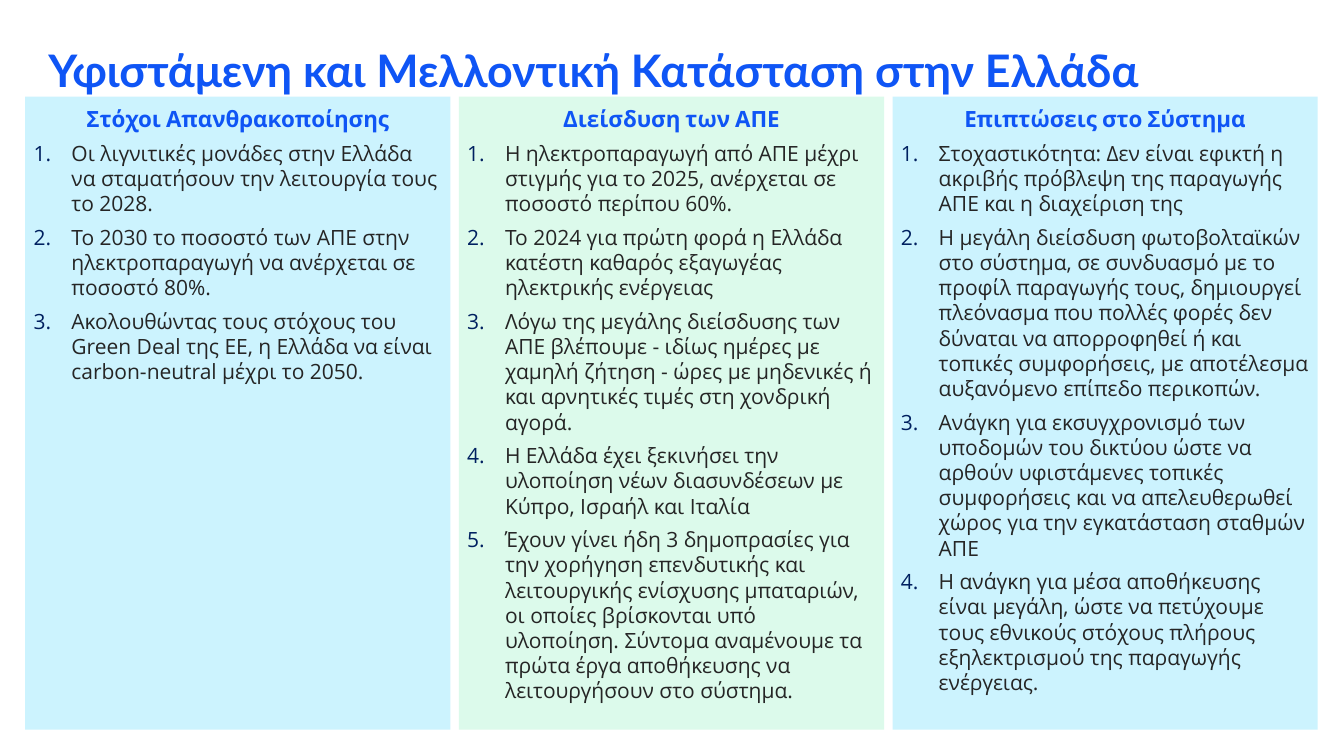
from dataclasses import dataclass
from pptx import Presentation
from pptx.dml.color import RGBColor as Rgb
from pptx.enum.text import MSO_ANCHOR as Anchor, MSO_AUTO_SIZE as Fit, PP_ALIGN as Align
from pptx.oxml.ns import qn
from pptx.util import Pt
from lxml.etree import SubElement as Sub


@dataclass(frozen=True)
class Theme:
    """Colours, fonts and type sizes."""
    blue: str = "0F55F5"
    navy: str = "002060"
    ink: str = "252525"
    sky: str = "CCF3FE"
    mint: str = "DCFAEB"
    title: tuple = ("Lato", 32)
    head: tuple = ("Cabin", 16)
    body: tuple = ("Open Sans", 15)
    gap: int = 6


class Deck:
    """Slide builder with one theme and lengths in px."""

    def __init__(self, theme, wide, high):
        self.theme = theme
        self.prs = Presentation()
        self.prs.slide_width = self.px(wide)
        self.prs.slide_height = self.px(high)
        self.slide = self.prs.slides.add_slide(self.prs.slide_layouts[4])

    def px(self, n):
        return n * 9525

    def place(self, idx, box, inset, anchor, fit):
        hold = self.slide.placeholders[idx]
        hold.left, hold.top, hold.width, hold.height = map(self.px, box)
        frame = hold.text_frame
        frame.margin_left = frame.margin_right = self.px(inset)
        frame.margin_top = frame.margin_bottom = self.px(inset)
        frame.word_wrap = True
        frame.vertical_anchor = anchor
        frame.auto_size = fit
        return hold

    def add_text(self, para, text, face, color, bold):
        run = para.add_run()
        run.text = text
        run.font.name, size = face
        run.font.size = Pt(size)
        run.font.bold = bold
        run.font.color.rgb = Rgb.from_string(color)

    def mark(self, para, indent):
        props = para._p.get_or_add_pPr()
        props.set("marL", str(self.px(indent)))
        props.set("indent", str(-self.px(indent)))
        if not indent:
            Sub(props, qn("a:buNone"))
            return
        tint = Sub(props, qn("a:buClr"))
        Sub(tint, qn("a:srgbClr"), val=self.theme.navy)
        Sub(props, qn("a:buFont"), typeface=self.theme.body[0])
        Sub(props, qn("a:buAutoNum"), type="arabicPeriod")

    def title(self, text, box):
        para = self.place(0, box, 0, Anchor.MIDDLE, Fit.SHAPE_TO_FIT_TEXT).text_frame.paragraphs[0]
        para.alignment = Align.LEFT
        self.add_text(para, text, self.theme.title, self.theme.blue, True)

    def panel(self, idx, box, fill, head, items):
        look = self.theme
        hold = self.place(idx, box, 8, Anchor.TOP, Fit.NONE)
        hold.fill.solid()
        hold.fill.fore_color.rgb = Rgb.from_string(fill)
        para = hold.text_frame.paragraphs[0]
        self.mark(para, 0)
        para.alignment = Align.CENTER
        para.space_before = Pt(0)
        self.add_text(para, head, look.head, look.blue, True)
        for item in items:
            para = hold.text_frame.add_paragraph()
            self.mark(para, 36)
            para.alignment = Align.LEFT
            para.space_before = Pt(look.gap)
            self.add_text(para, item, look.body, look.ink, False)

    def save(self):
        for hold in list(self.slide.placeholders):
            if not hold.text_frame.text:
                hold._element.getparent().remove(hold._element)
        self.prs.save("out.pptx")


def main():
    look = Theme()
    deck = Deck(look, 1280, 720)
    deck.title("Υφιστάμενη και Μελλοντική Κατάσταση στην Ελλάδα", (46, 40, 1187, 52))
    panels = [
        (look.sky, "Στόχοι Απανθρακοποίησης", [
            "Οι λιγνιτικές μονάδες στην Ελλάδα να σταματήσουν την λειτουργία τους το 2028.",
            "Το 2030 το ποσοστό των ΑΠΕ στην ηλεκτροπαραγωγή να ανέρχεται σε ποσοστό 80%.",
            "Ακολουθώντας τους στόχους του Green Deal της ΕΕ, η Ελλάδα να είναι "
            "carbon-neutral μέχρι το 2050.",
        ]),
        (look.mint, "Διείσδυση των ΑΠΕ", [
            "Η ηλεκτροπαραγωγή από ΑΠΕ μέχρι στιγμής για το 2025, ανέρχεται σε "
            "ποσοστό περίπου 60%.",
            "Το 2024 για πρώτη φορά η Ελλάδα κατέστη καθαρός εξαγωγέας ηλεκτρικής ενέργειας",
            "Λόγω της μεγάλης διείσδυσης των ΑΠΕ βλέπουμε - ιδίως ημέρες με χαμηλή ζήτηση - "
            "ώρες με μηδενικές ή και αρνητικές τιμές στη χονδρική αγορά.",
            "Η Ελλάδα έχει ξεκινήσει την υλοποίηση νέων διασυνδέσεων με Κύπρο, Ισραήλ και Ιταλία",
            "Έχουν γίνει ήδη 3 δημοπρασίες για την χορήγηση επενδυτικής και λειτουργικής "
            "ενίσχυσης μπαταριών, οι οποίες βρίσκονται υπό υλοποίηση. Σύντομα αναμένουμε "
            "τα πρώτα έργα αποθήκευσης να λειτουργήσουν στο σύστημα.",
        ]),
        (look.sky, "Επιπτώσεις στο Σύστημα", [
            "Στοχαστικότητα: Δεν είναι εφικτή η ακριβής πρόβλεψη της παραγωγής ΑΠΕ "
            "και η διαχείριση της",
            "Η μεγάλη διείσδυση φωτοβολταϊκών στο σύστημα, σε συνδυασμό με το προφίλ "
            "παραγωγής τους, δημιουργεί πλεόνασμα που πολλές φορές δεν δύναται να "
            "απορροφηθεί ή και τοπικές συμφορήσεις, με αποτέλεσμα αυξανόμενο επίπεδο περικοπών.",
            "Ανάγκη για εκσυγχρονισμό των υποδομών του δικτύου ώστε να αρθούν υφιστάμενες "
            "τοπικές συμφορήσεις και να απελευθερωθεί χώρος για την εγκατάσταση σταθμών ΑΠΕ",
            "Η ανάγκη για μέσα αποθήκευσης είναι μεγάλη, ώστε να πετύχουμε τους εθνικούς "
            "στόχους πλήρους εξηλεκτρισμού της παραγωγής ενέργειας.",
        ]),
    ]
    for col, (fill, head, items) in enumerate(panels):
        deck.panel(col + 1, (24 + 413 * col, 92, 405, 603), fill, head, items)
    deck.save()


if __name__ == "__main__":
    main()
